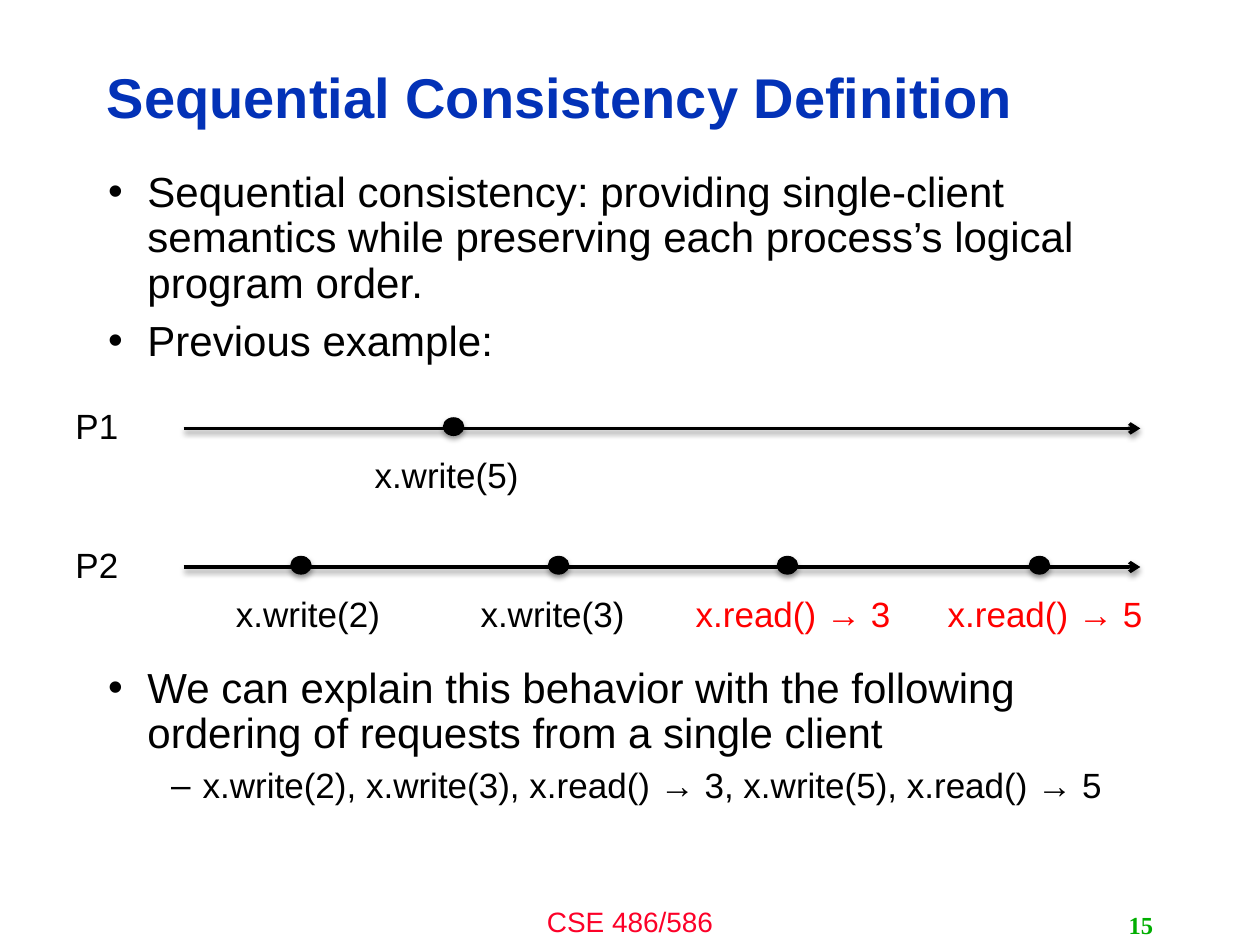
from lxml.etree import SubElement
from pptx import Presentation
from pptx.dml.color import RGBColor
from pptx.enum.shapes import MSO_CONNECTOR, MSO_SHAPE
from pptx.enum.text import MSO_ANCHOR, PP_ALIGN
from pptx.oxml.ns import qn
from pptx.util import Pt

BLACK = RGBColor(0, 0, 0)
RED = RGBColor(0xFF, 0, 0)
BLUE = RGBColor(0x03, 0x32, 0xB7)
PINK = RGBColor(0xFC, 0x01, 0x28)
GREEN = RGBColor(0, 0xAE, 0)

START, END = 105, 651.6
DOT_W, DOT_H = 11.5, 10
LABEL_W = 240

# Name, height of the line, events as (dot centre, label centre, text, colour)
LANES = [
    ("P1", 244.8, [(259.2, 255.2, "x.write(5)", BLACK)]),
    ("P2", 324, [
        (172, 176, "x.write(2)", BLACK),
        (319.2, 315.8, "x.write(3)", BLACK),
        (450, 453.2, "x.read() → 3", RED),
        (594, 597.2, "x.read() → 5", RED),
    ]),
]

# Bullet, text, size, left indent, hang, space before
TOP = [
    ("•", "Sequential consistency: providing single-client semantics while "
     "preserving each process’s logical program order.", 24, 22.5, 22.5, 0),
    ("•", "Previous example:", 24, 22.5, 22.5, 7.2),
]
BOTTOM = [
    ("•", "We can explain this behavior with the following ordering of "
     "requests from a single client", 24, 22.5, 22.5, 0),
    ("–", "x.write(2), x.write(3), x.read() → 3, x.write(5), x.read() → 5",
     20, 54, 18, 6),
]


def style(item, form):
    for key, val in form.items():
        setattr(item, key, val)


def write(para, text, size, color=BLACK, face="Arial", bold=False):
    run = para.add_run()
    run.text = text
    style(run.font, {"name": face, "size": Pt(size), "bold": bold})
    run.font.color.rgb = color


def add_frame(slide, x, y, w, h, **form):
    frame = slide.shapes.add_textbox(Pt(x), Pt(y), Pt(w), Pt(h)).text_frame
    style(frame, {"word_wrap": True, **form})
    return frame


def add_text(slide, box, text, size, color=BLACK, align=PP_ALIGN.LEFT,
             anchor=MSO_ANCHOR.TOP, **font):
    frame = add_frame(slide, *box, vertical_anchor=anchor)
    para = frame.paragraphs[0]
    para.alignment = align
    write(para, text, size, color, **font)


def add_list(slide, box, items):
    frame = add_frame(slide, *box)
    for num, (mark, text, size, left, hang, gap) in enumerate(items):
        para = frame.add_paragraph() if num else frame.paragraphs[0]
        style(para, {"line_spacing": 0.9, "space_before": Pt(gap)})
        props = para._p.get_or_add_pPr()
        props.set("marL", str(Pt(left)))
        props.set("indent", str(-Pt(hang)))
        SubElement(props, qn("a:buFont"), typeface="Arial")
        SubElement(props, qn("a:buChar"), char=mark)
        write(para, text, size)


def add_shade(shape, dist, alpha):
    """Give the shape a soft black shadow straight below it."""
    group = SubElement(shape._element.spPr, qn("a:effectLst"))
    shade = SubElement(group, qn("a:outerShdw"), blurRad=str(Pt(3.1)),
                       dist=str(Pt(dist)), dir="5400000", rotWithShape="0")
    color = SubElement(shade, qn("a:srgbClr"), val=str(BLACK))
    SubElement(color, qn("a:alpha"), val=str(alpha * 1000))


def add_arrow(slide, y):
    arrow = slide.shapes.add_connector(
        MSO_CONNECTOR.STRAIGHT, Pt(START), Pt(y), Pt(END), Pt(y))
    arrow.line.color.rgb = BLACK
    arrow.line.width = Pt(2)
    SubElement(arrow.line._get_or_add_ln(), qn("a:tailEnd"), type="arrow")
    add_shade(arrow, 1.6, 38)


def add_dot(slide, x, y):
    dot = slide.shapes.add_shape(
        MSO_SHAPE.OVAL, Pt(x - DOT_W / 2), Pt(y - DOT_H / 2),
        Pt(DOT_W), Pt(DOT_H))
    dot.fill.solid()
    dot.fill.fore_color.rgb = BLACK
    dot.line.color.rgb = BLACK
    dot.line.width = Pt(0.75)
    add_shade(dot, 1.8, 35)


def add_lane(slide, name, y, events):
    add_arrow(slide, y)
    add_text(slide, (36, y - 17, 68.4, 31.5), name, 20)
    for spot, mid, text, color in events:
        add_dot(slide, spot, y - 1)
        add_text(slide, (mid - LABEL_W / 2, y + 10.8, LABEL_W, 31.5),
                 text, 20, color, PP_ALIGN.CENTER)


def main():
    deck = Presentation()
    deck.slide_width, deck.slide_height = Pt(720), Pt(540)
    slide = deck.slides.add_slide(deck.slide_layouts[6])
    add_text(slide, (54, 26, 574.5, 58.3), "Sequential Consistency Definition",
             32, BLUE, anchor=MSO_ANCHOR.MIDDLE, bold=True)
    add_list(slide, (54.7, 94.3, 604.8, 125), TOP)
    add_list(slide, (54.7, 377.7, 604.8, 104), BOTTOM)
    for lane in LANES:
        add_lane(slide, *lane)
    add_text(slide, (240, 513.3, 240, 26.6), "CSE 486/586", 16, PINK,
             PP_ALIGN.CENTER)
    add_text(slide, (516.2, 517, 149.8, 23), "15", 14, GREEN, PP_ALIGN.RIGHT,
             MSO_ANCHOR.MIDDLE, face="Times New Roman", bold=True)
    deck.save("out.pptx")


if __name__ == "__main__":
    main()
